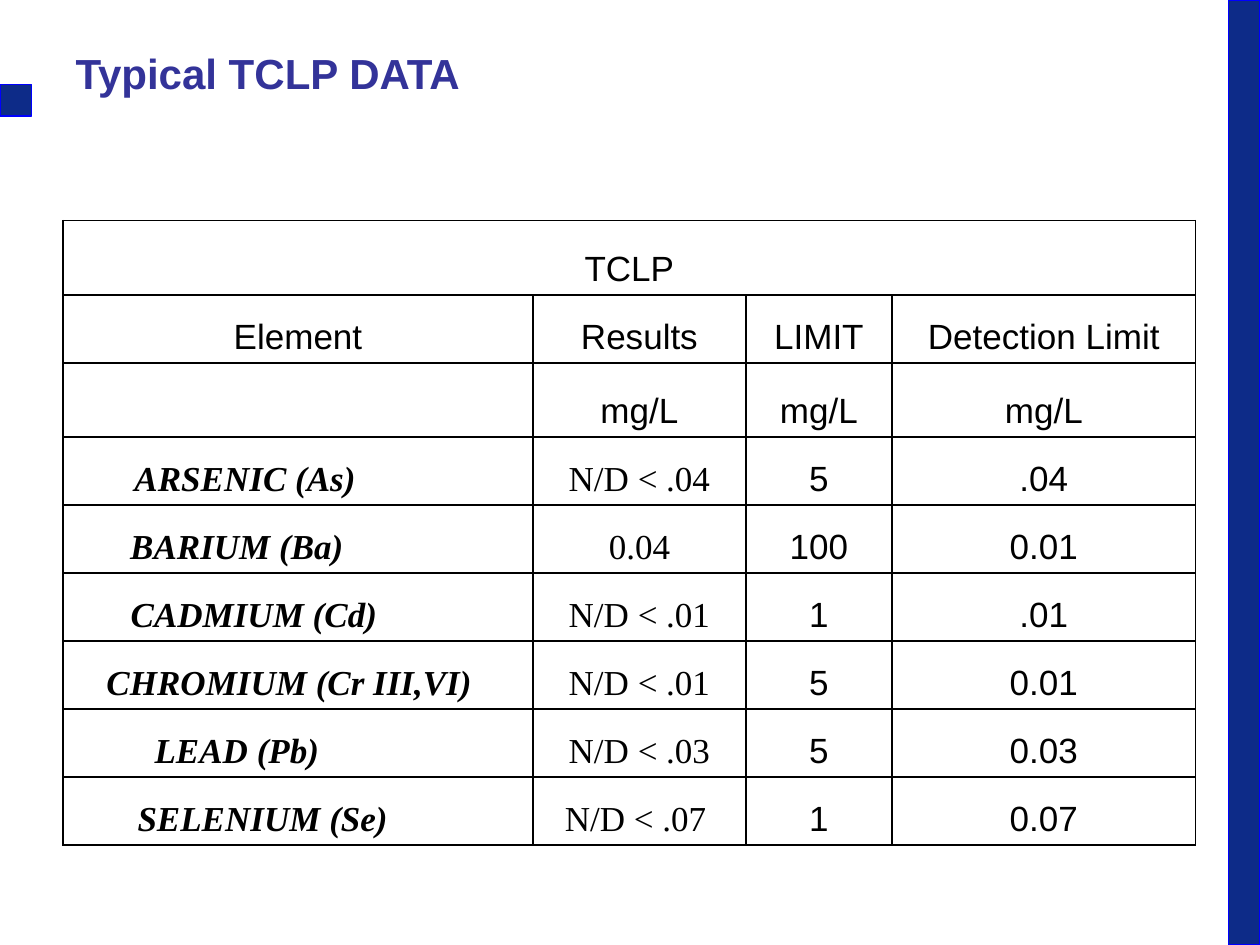
from pptx import Presentation
from pptx.dml.color import RGBColor
from pptx.enum.shapes import MSO_SHAPE
from pptx.enum.text import MSO_ANCHOR, PP_ALIGN
from pptx.oxml.ns import qn
from pptx.util import Inches, Pt
from lxml.etree import SubElement

COLORS = {"navy": "0D2B88", "edge": "0000FF", "title": "333399", "ink": "000000"}
SANS, SERIF = "Arial", "Times New Roman"
COLS = [3.73, 1.69, 1.16, 2.41]
ROWS = [0.59, 0.54, 0.59] + [0.54] * 6
DATA = [
    ["TCLP", "", "", ""],
    ["Element", "Results", "LIMIT", "Detection Limit"],
    ["", "mg/L", "mg/L", "mg/L"],
    ["ARSENIC (As)", "N/D < .04", "5", ".04"],
    ["BARIUM (Ba)", "0.04", "100", "0.01"],
    ["CADMIUM (Cd)", "N/D < .01", "1", ".01"],
    ["CHROMIUM (Cr III,VI)", "N/D < .01", "5", "0.01"],
    ["LEAD (Pb)", "N/D < .03", "5", "0.03"],
    ["SELENIUM (Se)", "N/D < .07", "1", "0.07"],
]
SHIFTS = {(3, 0): 0.84, (4, 0): 0.97, (5, 0): 0.7, (6, 0): 0.14,
          (7, 0): 0.97, (8, 0): 0.56, (8, 1): 0.06}


def rgb(name):
    return RGBColor.from_string(COLORS[name])


def add_borders(cell):
    tcPr = cell._tc.get_or_add_tcPr()
    for side in ("a:lnL", "a:lnR", "a:lnT", "a:lnB"):
        ln = SubElement(tcPr, qn(side), w=str(Pt(1)))
        fill = SubElement(ln, qn("a:solidFill"))
        SubElement(fill, qn("a:srgbClr"), val=COLORS["ink"])


prs = Presentation()
prs.slide_width, prs.slide_height = Inches(10), Inches(7.5)
s = prs.slides.add_slide(prs.slide_layouts[5])

for box in [(9.75, 0, 0.25, 7.5), (0, 0.67, 0.25, 0.25)]:
    sp = s.shapes.add_shape(MSO_SHAPE.RECTANGLE, *map(Inches, box))
    sp.shadow.inherit = False
    sp.fill.solid()
    sp.fill.fore_color.rgb = rgb("navy")
    sp.line.color.rgb = rgb("edge")
    sp.line.width = Pt(0.75)

title = s.shapes.title
title.left, title.top, title.width, title.height = map(Inches, (0.5, 0.3, 9, 0.56))
tf = title.text_frame
tf.text = "Typical TCLP DATA"
tf.vertical_anchor = MSO_ANCHOR.MIDDLE
p = tf.paragraphs[0]
p.alignment = PP_ALIGN.LEFT
p.font.name, p.font.size, p.font.bold = SANS, Pt(24), True
p.font.color.rgb = rgb("title")

frame = s.shapes.add_table(len(ROWS), len(COLS), Inches(0.5), Inches(1.75),
                           Inches(sum(COLS)), Inches(sum(ROWS)))
table = frame.table
table.first_row = table.horz_banding = False
for col, width in zip(table.columns, COLS):
    col.width = Inches(width)
for row, height in zip(table.rows, ROWS):
    row.height = Inches(height)

for i, texts in enumerate(DATA):
    for j, text in enumerate(texts):
        cell = table.cell(i, j)
        add_borders(cell)
        cell.fill.background()
        cell.vertical_anchor = MSO_ANCHOR.BOTTOM
        cell.margin_left = Inches(0.09)
        cell.margin_right = Inches(0.09 + SHIFTS.get((i, j), 0))
        cell.margin_top = cell.margin_bottom = Inches(0.05)
        cell.text = text
        p = cell.text_frame.paragraphs[0]
        p.alignment = PP_ALIGN.CENTER
        pPr = p._p.get_or_add_pPr()
        pPr.set("marL", str(Inches(0.38)))
        pPr.set("indent", str(-Inches(0.38)))
        p.font.name = SERIF if i > 2 and j < 2 else SANS
        p.font.size = Pt(20)
        p.font.bold = p.font.italic = i > 2 and j == 0
        p.font.color.rgb = rgb("ink")
table.cell(0, 0).merge(table.cell(0, len(COLS) - 1))

prs.save("out.pptx")
